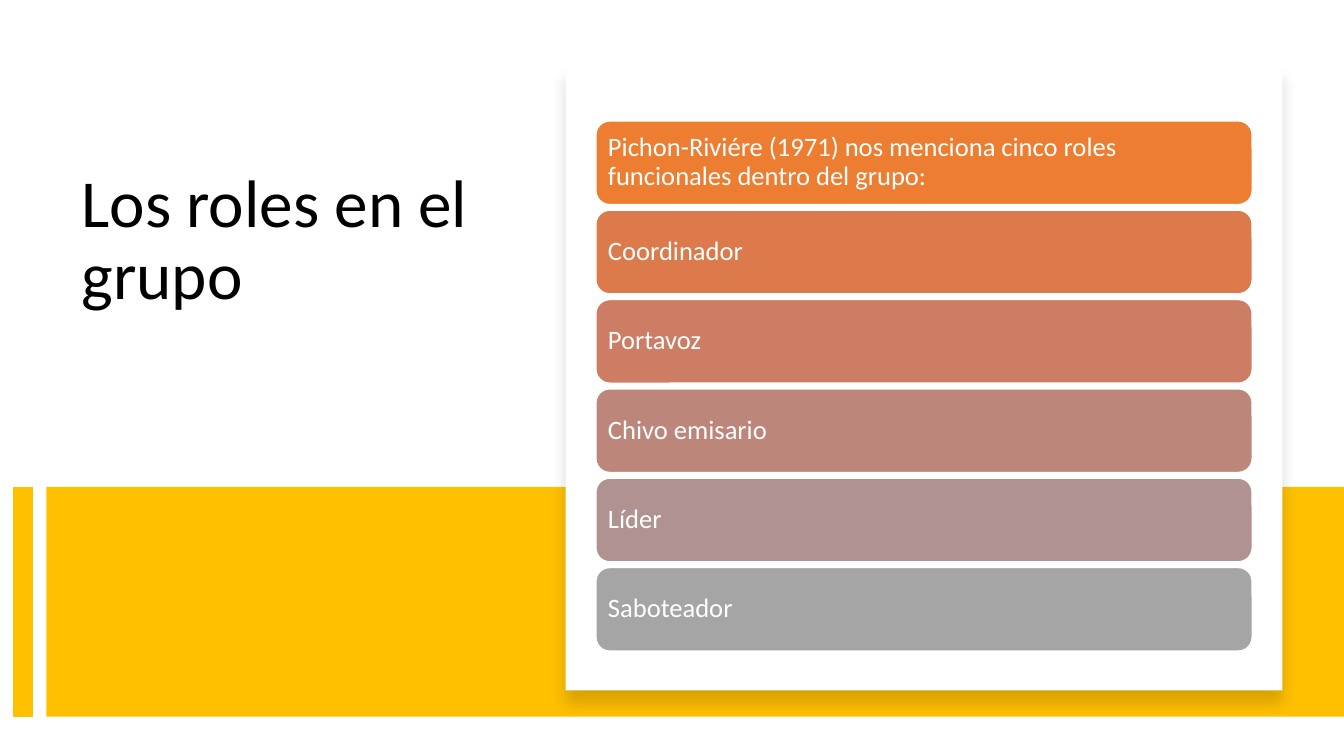
from dataclasses import dataclass

from lxml import etree
from pptx import Presentation
from pptx.dml.color import RGBColor
from pptx.enum.shapes import MSO_CONNECTOR, MSO_SHAPE
from pptx.enum.text import MSO_ANCHOR, PP_ALIGN
from pptx.oxml.ns import qn
from pptx.util import Inches, Pt

TITLE = "Los roles en el grupo"
ROLES = [
    ("Pichon-Riviére (1971) nos menciona cinco roles funcionales dentro del grupo:", "ED7D31"),
    ("Coordinador", "DC7A4B"),
    ("Portavoz", "CC7D64"),
    ("Chivo emisario", "BD867B"),
    ("Líder", "B09391"),
    ("Saboteador", "A5A5A5"),
]


@dataclass(frozen=True)
class Theme:
    font: str = "Calibri"
    title_size: int = 48
    role_size: int = 19
    black: str = "000000"
    white: str = "FFFFFF"
    gold: str = "FFC000"


THEME = Theme()
SLIDE_WIDTH, SLIDE_HEIGHT = 13.33, 7.5
BAND_LEFT, BAND_TOP, BAND_HEIGHT = 0.46, 4.83, 2.28
STRIPE_X, STRIPE_WIDTH = BAND_LEFT / 2, 14
PANEL = (5.61, 0.64, 7.11, 6.21)
PANEL_MARGIN = 0.3
ROLE_TOP, ROLE_HEIGHT, ROLE_PITCH = 1.2, 0.83, 0.886


def color(value):
    return RGBColor.from_string(value)


def add_box(slide, kind, box, fill, outline=None):
    shape = slide.shapes.add_shape(kind, *map(Inches, box))
    shape.shadow.inherit = False
    shape.fill.solid()
    shape.fill.fore_color.rgb = color(fill)
    if outline:
        shape.line.color.rgb = color(outline)
        shape.line.width = Pt(1)
    else:
        shape.line.fill.background()
    return shape


def write(shape, text, size, text_color, anchor, inset):
    frame = shape.text_frame
    frame.word_wrap = True
    frame.vertical_anchor = anchor
    frame.margin_left = frame.margin_right = Inches(inset)
    frame.margin_top = frame.margin_bottom = Inches(min(inset, 0.08))
    frame.text = text
    paragraph = frame.paragraphs[0]
    paragraph.alignment = PP_ALIGN.LEFT
    paragraph.line_spacing = 0.9
    font = paragraph.runs[0].font
    font.name, font.size = THEME.font, Pt(size)
    font.color.rgb = color(text_color)


def add_soft_shadow(shape):
    effects = shape.element.spPr.find(qn("a:effectLst"))
    shadow = etree.SubElement(effects, qn("a:outerShdw"), blurRad=str(Pt(11)),
                              dist=str(Pt(10)), dir="5400000", algn="t", rotWithShape="0")
    tint = etree.SubElement(shadow, qn("a:srgbClr"), val=THEME.black)
    etree.SubElement(tint, qn("a:alpha"), val="15000")


def add_stripe(slide):
    x = Inches(STRIPE_X)
    stripe = slide.shapes.add_connector(MSO_CONNECTOR.STRAIGHT, x, Inches(BAND_TOP),
                                        x, Inches(BAND_TOP + BAND_HEIGHT))
    stripe.line.color.rgb = color(THEME.gold)
    stripe.line.width = Pt(STRIPE_WIDTH)
    etree.SubElement(stripe.element.spPr, qn("a:effectLst"))


def main():
    presentation = Presentation()
    presentation.slide_width = Inches(SLIDE_WIDTH)
    presentation.slide_height = Inches(SLIDE_HEIGHT)
    slide = presentation.slides.add_slide(presentation.slide_layouts[6])

    title = slide.shapes.add_textbox(*map(Inches, (0.71, 1.6, 4.15, 2.94)))
    write(title, TITLE, THEME.title_size, THEME.black, MSO_ANCHOR.TOP, 0.1)

    band = (BAND_LEFT, BAND_TOP, SLIDE_WIDTH - BAND_LEFT, BAND_HEIGHT)
    add_box(slide, MSO_SHAPE.RECTANGLE, band, THEME.gold)
    add_stripe(slide)
    add_soft_shadow(add_box(slide, MSO_SHAPE.RECTANGLE, PANEL, THEME.white))

    role_left = PANEL[0] + PANEL_MARGIN
    role_width = PANEL[2] - 2 * PANEL_MARGIN
    for row, (role, fill) in enumerate(ROLES):
        box = (role_left, ROLE_TOP + row * ROLE_PITCH, role_width, ROLE_HEIGHT)
        bar = add_box(slide, MSO_SHAPE.ROUNDED_RECTANGLE, box, fill, THEME.white)
        write(bar, role, THEME.role_size, THEME.white, MSO_ANCHOR.MIDDLE, 0.08)

    presentation.save("out.pptx")


if __name__ == "__main__":
    main()
